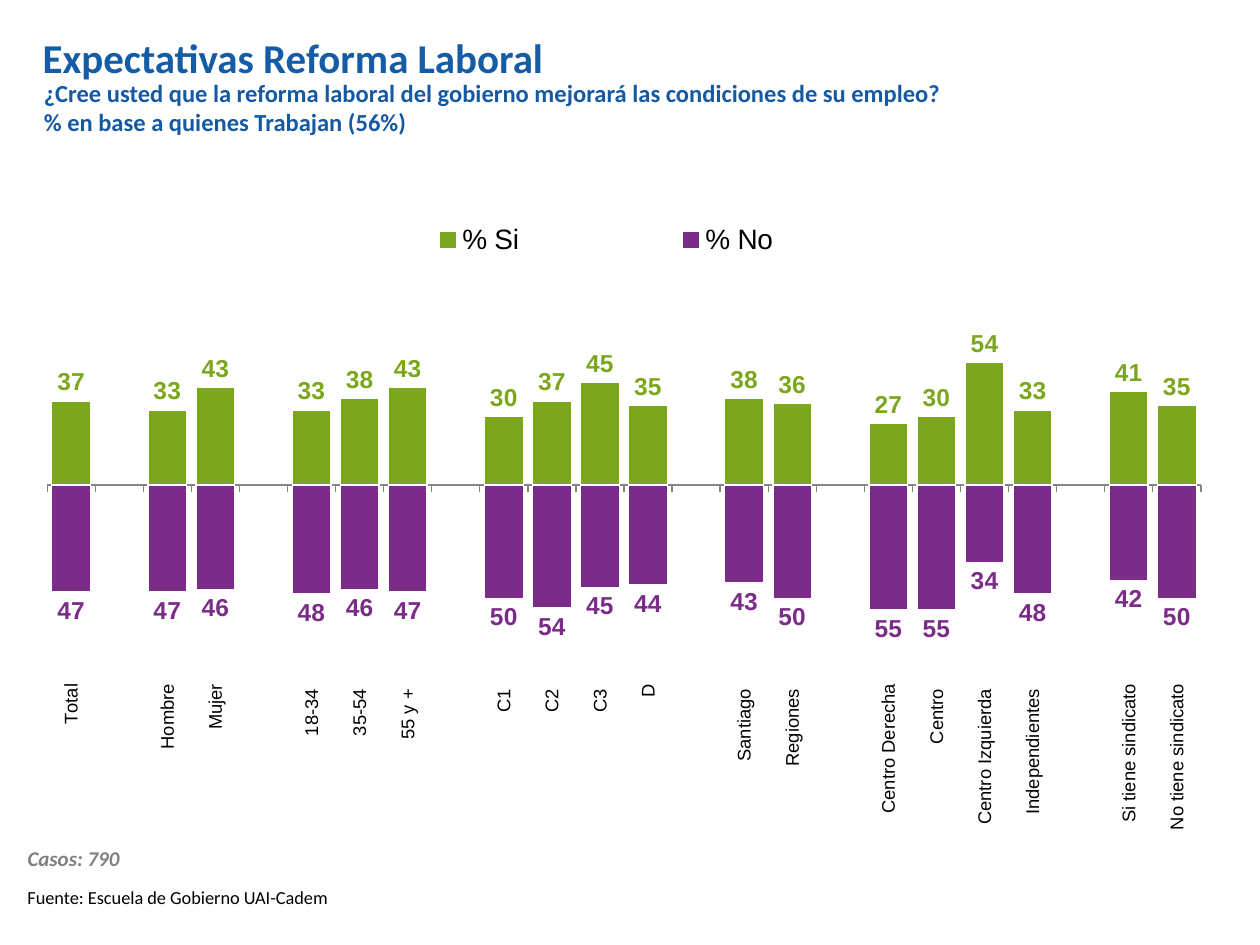
from dataclasses import dataclass
from lxml.etree import SubElement as Sub
from pptx import Presentation
from pptx.chart.data import CategoryChartData as Data
from pptx.dml.color import RGBColor as Rgb
from pptx.enum.chart import (XL_CHART_TYPE as Kind, XL_LABEL_POSITION as Spot,
                             XL_LEGEND_POSITION as Side, XL_TICK_LABEL_POSITION as Tick,
                             XL_TICK_MARK as Mark)
from pptx.enum.text import MSO_ANCHOR as Anchor
from pptx.oxml.ns import qn
from pptx.util import Inches, Pt


@dataclass(frozen=True)
class Theme:
    head: str = "155CA7"
    ask: str = "1559A2"
    note: str = "808080"
    ink: str = "000000"
    yes: str = "7CA71D"
    no: str = "7B2C88"
    white: str = "FFFFFF"
    axis: str = "868686"
    text: str = "Calibri"
    plot: str = "Arial"
    title: float = 23.4
    key: float = 16
    label: float = 14
    case: float = 12
    small: float = 10.5


theme = Theme()

GROUPS = [
    (" ", [("Total", 37, 47)]),
    ("  ", [("Hombre", 33, 47), ("Mujer", 43, 46)]),
    ("   ", [("18-34 ", 33, 48), ("35-54 ", 38, 46), ("55 y + ", 43, 47)]),
    ("    ", [("C1 ", 30, 50), ("C2 ", 37, 54), ("C3 ", 45, 45), ("D", 35, 44)]),
    ("", [("Santiago ", 38, 43), ("Regiones ", 36, 50)]),
    ("", [("Centro Derecha", 27, 55), ("Centro ", 30, 55),
          ("Centro Izquierda ", 54, 34), ("Independientes ", 33, 48)]),
    (None, [("Si tiene sindicato", 41, 42), ("No tiene sindicato", 35, 50)]),
]


def style(font, face, size, color, bold=False, italic=False):
    font.name, font.size = face, Pt(size)
    font.bold, font.italic = bold, italic
    font.color.rgb = Rgb.from_string(color)


def add_text(slide, box, text, size, color, bold=False, italic=False,
             wrap=True, anchor=Anchor.TOP):
    frame = slide.shapes.add_textbox(*map(Inches, box)).text_frame
    frame.word_wrap = wrap
    frame.vertical_anchor = anchor
    frame.text = text
    for para in frame.paragraphs:
        for run in para.runs:
            style(run.font, theme.text, size, color, bold, italic)


def add_header(slide, box):
    left, top, width, height = box
    add_text(slide, (left, top, width, 0.64), "Expectativas Reforma Laboral",
             theme.title, theme.head, bold=True, anchor=Anchor.MIDDLE)
    ask = ("¿Cree usted que la reforma laboral del gobierno mejorará las "
           "condiciones de su empleo?\n% en base a quienes Trabajan (56%)")
    add_text(slide, (left + 0.01, top + 0.44, width, height - 0.44), ask,
             theme.label, theme.ask, bold=True)


def add_footer(slide, box):
    left, top, width, height = box
    add_text(slide, (left, top, 0.98, 0.3), "Casos: 790", theme.case, theme.note,
             bold=True, italic=True, wrap=False)
    add_text(slide, (left, top + 0.32, width, height - 0.32),
             "Fuente: Escuela de Gobierno UAI-Cadem", theme.small, theme.ink, wrap=False)


def set_layout(owner, x, y, w, h, inner=False):
    layout = owner.find(qn("c:layout"))
    if layout is None:
        layout = Sub(owner, qn("c:layout"))
        owner.remove(layout)
        first = owner.find(qn("c:legendPos"))
        owner.insert(0 if first is None else owner.index(first) + 1, layout)
    manual = Sub(layout, qn("c:manualLayout"))
    parts = [("layoutTarget", "inner")] if inner else []
    parts += [("xMode", "edge"), ("yMode", "edge"), ("x", x), ("y", y), ("w", w), ("h", h)]
    for tag, val in parts:
        Sub(manual, qn("c:" + tag)).set("val", str(val))


def chart_data():
    data = Data()
    yes, no = [], []
    for gap, rows in GROUPS:
        for name, up, down in rows:
            data.add_category(name)
            yes.append(up)
            no.append(-down)
        if gap is not None:
            data.add_category(gap)
            yes.append(None)
            no.append(None)
    data.add_series("% Si", yes)
    data.add_series("% No", no)
    return data


def style_bars(plot):
    plot.gap_width, plot.overlap = 24, 100
    plot.vary_by_categories = False
    looks = ((theme.yes, "#,##0"), (theme.no, "#,##0;#,##0"))
    for bars, (color, form) in zip(plot.series, looks):
        bars.invert_if_negative = False
        bars.format.fill.solid()
        bars.format.fill.fore_color.rgb = Rgb.from_string(color)
        bars.format.line.color.rgb = Rgb.from_string(theme.white)
        bars.format.line.width = Pt(0.75)
        labels = bars.data_labels
        labels.show_value = True
        labels.number_format, labels.number_format_is_linked = form, False
        labels.position = Spot.OUTSIDE_END
        style(labels.font, theme.plot, theme.label, color, bold=True)


def style_axes(chart):
    cats, vals = chart.category_axis, chart.value_axis
    cats.tick_label_position = Tick.LOW
    cats.major_tick_mark = Mark.OUTSIDE
    cats.format.line.color.rgb = Rgb.from_string(theme.axis)
    style(cats.tick_labels.font, theme.plot, theme.small, theme.ink)
    body = chart.element.find(".//" + qn("c:catAx")).find(".//" + qn("a:bodyPr"))
    body.set("rot", "-5400000")
    body.set("vert", "horz")
    vals.minimum_scale, vals.maximum_scale = -82, 80
    vals.has_major_gridlines = False
    vals.visible = False


def add_bars(slide, box):
    chart = slide.shapes.add_chart(Kind.COLUMN_CLUSTERED, *map(Inches, box),
                                   chart_data()).chart
    style(chart.font, theme.plot, 10, theme.ink)
    chart.has_title = False
    chart.has_legend = True
    chart.legend.position = Side.TOP
    chart.legend.include_in_layout = False
    style(chart.legend.font, theme.plot, theme.key, theme.ink)
    style_bars(chart.plots[0])
    style_axes(chart)
    root = chart.element
    set_layout(root.find(".//" + qn("c:plotArea")), 0.01, 0.17, 0.97, 0.58, inner=True)
    set_layout(root.find(".//" + qn("c:legend")), 0.21, 0.03, 0.54, 0.08)


def main():
    deck = Presentation()
    deck.slide_width, deck.slide_height = Inches(10), Inches(7.5)
    slide = deck.slides.add_slide(deck.slide_layouts[6])
    add_footer(slide, (0.12, 6.66, 2.63, 0.6))
    add_bars(slide, (0.28, 1.55, 9.44, 5.04))
    add_header(slide, (0.24, 0.13, 8.53, 1.01))
    deck.save("out.pptx")


if __name__ == "__main__":
    main()
